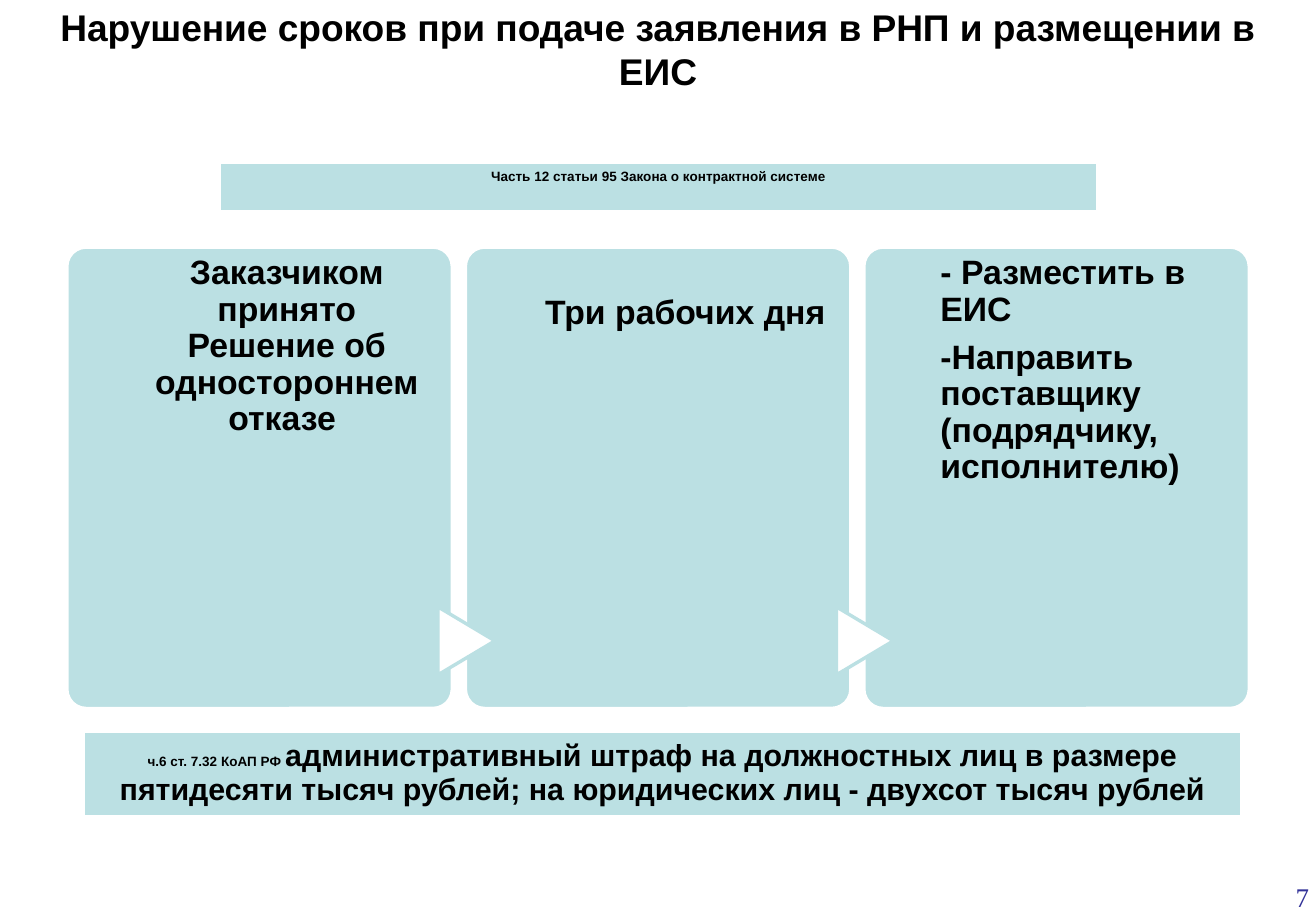
from lxml import etree
from pptx import Presentation
from pptx.dml.color import RGBColor
from pptx.enum.shapes import MSO_SHAPE
from pptx.enum.text import MSO_ANCHOR, PP_ALIGN
from pptx.oxml.ns import qn
from pptx.util import Pt

COLORS = {"panel": "BBE0E3", "white": "FFFFFF", "text": "000000", "number": "333399"}


def write(p, text, size=20, bold=True, color="text", font="Arial", align=PP_ALIGN.CENTER):
    p.alignment = align
    r = p.add_run()
    r.text = text
    r.font.name = font
    r.font.size = Pt(size)
    r.font.bold = bold
    r.font.color.rgb = RGBColor.from_string(COLORS[color])


def add_panel(kind, x, y, w, h, fill, line):
    sp = s.shapes.add_shape(kind, Pt(x), Pt(y), Pt(w), Pt(h))
    sp.shadow.inherit = False
    sp.fill.solid()
    sp.fill.fore_color.rgb = RGBColor.from_string(COLORS[fill])
    sp.line.color.rgb = RGBColor.from_string(COLORS[line])
    sp.line.width = Pt(2)
    return sp


prs = Presentation()
prs.slide_width, prs.slide_height = Pt(780), Pt(540)
s = prs.slides.add_slide(prs.slide_layouts[5])

title = s.shapes.title
title.left, title.top, title.width, title.height = Pt(7), Pt(0), Pt(766), Pt(59)
tf = title.text_frame
tf.word_wrap = True
tf.vertical_anchor = MSO_ANCHOR.BOTTOM
write(tf.paragraphs[0], "Нарушение сроков при подаче заявления в РНП и размещении в ЕИС", size=22)

steps = [
    (["Заказчиком принято Решение об одностороннем отказе "], PP_ALIGN.CENTER, 5),
    (["Три рабочих дня"], PP_ALIGN.CENTER, 36),
    (["- Разместить в ЕИС", "-Направить поставщику (подрядчику, исполнителю)"], PP_ALIGN.LEFT, 5),
]
CARD_X, CARD_Y, CARD_W, CARD_H, PITCH = 39.6, 146.5, 228.5, 273.5, 236.2

for i, (lines, align, top) in enumerate(steps):
    x = CARD_X + i * PITCH
    card = add_panel(MSO_SHAPE.ROUNDED_RECTANGLE, x, CARD_Y, CARD_W, CARD_H, "panel", "white")
    card.adjustments[0] = 0.05
    if i:
        arrow = add_panel(MSO_SHAPE.FLOWCHART_EXTRACT, x - 19.5, 363, 40.3, 33.8, "white", "panel")
        arrow.rotation = 90
    box = s.shapes.add_textbox(Pt(x + 45.4), Pt(CARD_Y), Pt(170), Pt(CARD_H))
    tf = box.text_frame
    tf.word_wrap = True
    tf.margin_left = tf.margin_right = tf.margin_bottom = 0
    tf.margin_top = Pt(top)
    for n, line in enumerate(lines):
        p = tf.add_paragraph() if n else tf.paragraphs[0]
        p.line_spacing = 0.9
        p.space_after = Pt(7)
        write(p, line, align=align)

banners = [
    (130.3, 96.5, 520, 29.5, [("Часть 12 статьи 95 Закона о контрактной системе", 8)]),
    (49.7, 434.2, 686, 47, [
        ("ч.6 ст. 7.32 КоАП РФ ", 8),
        ("административный штраф на должностных лиц в размере пятидесяти тысяч рублей; "
         "на юридических лиц - двухсот тысяч рублей", 18),
    ]),
]
for x, y, w, h, runs in banners:
    table = s.shapes.add_table(1, 1, Pt(x), Pt(y), Pt(w), Pt(h)).table
    cell = table.cell(0, 0)
    tcPr = cell._tc.get_or_add_tcPr()
    for side, width in (("lnL", 1), ("lnR", 1), ("lnT", 1), ("lnB", 3)):
        ln = etree.SubElement(tcPr, qn(f"a:{side}"), w=str(Pt(width)))
        fill = etree.SubElement(ln, qn("a:solidFill"))
        etree.SubElement(fill, qn("a:srgbClr"), val=COLORS["white"])
    cell.fill.solid()
    cell.fill.fore_color.rgb = RGBColor.from_string(COLORS["panel"])
    for text, size in runs:
        write(cell.text_frame.paragraphs[0], text, size=size)

number = s.shapes.add_textbox(Pt(601), Pt(518.5), Pt(182), Pt(24))
number.text_frame.word_wrap = True
write(number.text_frame.paragraphs[0], "7", size=16, bold=False, color="number",
      font="Times New Roman", align=PP_ALIGN.RIGHT)

prs.save("out.pptx")
